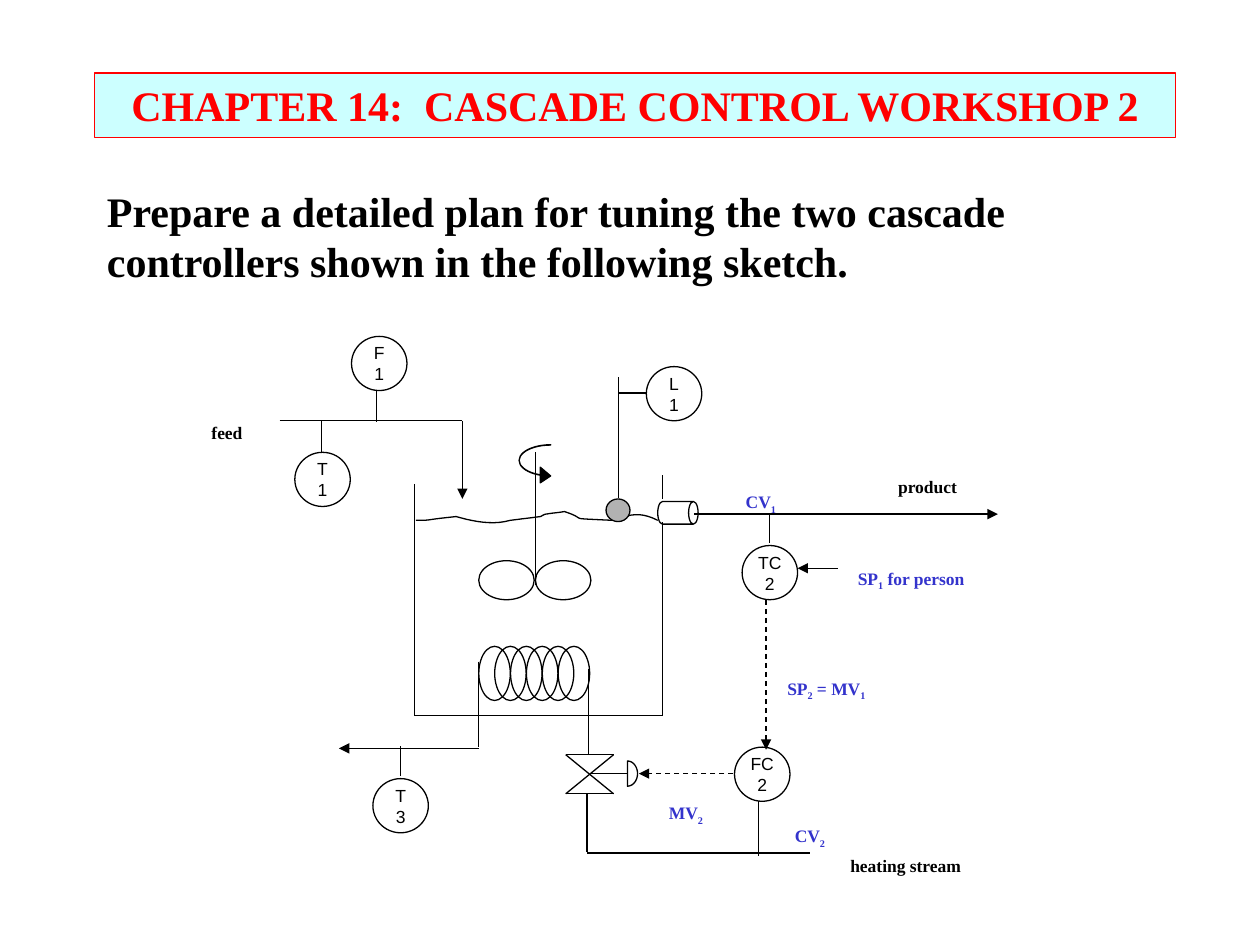
from lxml import etree
from math import cos, pi, sin
from pptx import Presentation
from pptx.dml.color import RGBColor
from pptx.enum.dml import MSO_LINE
from pptx.enum.shapes import MSO_CONNECTOR, MSO_SHAPE
from pptx.enum.text import MSO_ANCHOR, PP_ALIGN
from pptx.oxml.ns import qn
from pptx.util import Inches, Pt

STRAIGHT = MSO_CONNECTOR.STRAIGHT
OVAL = MSO_SHAPE.OVAL
DASH = MSO_LINE.DASH
TOP, MIDDLE = MSO_ANCHOR.TOP, MSO_ANCHOR.MIDDLE
LEFT, CENTER = PP_ALIGN.LEFT, PP_ALIGN.CENTER

THEME = {
    "black": RGBColor.from_string("000000"),
    "red": RGBColor.from_string("FF0000"),
    "banner": RGBColor.from_string("CCFFFF"),
    "float": RGBColor.from_string("B2B2B2"),
    "signal": RGBColor.from_string("3333CC"),
    "line": Pt(0.75),
    "heading": {"name": "Times New Roman", "size": Pt(24), "bold": True},
    "label": {"name": "Times New Roman", "size": Pt(10), "bold": True},
    "tag": {"name": "Arial", "size": Pt(10), "bold": False},
}


def write(shape, lines, style, color, align=LEFT, anchor=TOP, wrap=False):
    """Fill a shape with lines of text; parts between underscores are subscripts."""
    frame = shape.text_frame
    frame.word_wrap = wrap
    frame.vertical_anchor = anchor
    for index, line in enumerate(lines):
        paragraph = frame.add_paragraph() if index else frame.paragraphs[0]
        paragraph.alignment = align
        for part, text in enumerate(line.split("_")):
            if not text:
                continue
            run = paragraph.add_run()
            run.text = text
            for attribute, value in THEME[style].items():
                setattr(run.font, attribute, value)
            run.font.color.rgb = THEME[color]
            if part % 2:
                run.font._element.set("baseline", "-25000")


def connect(x1, y1, x2, y2, arrow=False, dash=None):
    """Draw a straight line, with an arrowhead at its end if asked for."""
    connector = shapes.add_connector(
        STRAIGHT, Inches(x1), Inches(y1), Inches(x2), Inches(y2))
    connector.line.width = THEME["line"]
    connector.line.color.rgb = THEME["black"]
    connector.line.dash_style = dash
    if arrow:
        etree.SubElement(connector.line._get_or_add_ln(), qn("a:tailEnd"), type="triangle")
    etree.SubElement(connector._element.spPr, qn("a:effectLst"))


presentation = Presentation()
presentation.slide_width, presentation.slide_height = Inches(10), Inches(7.5)
slide = presentation.slides.add_slide(presentation.slide_layouts[6])
shapes = slide.shapes

# Title banner
banner = shapes.add_shape(
    MSO_SHAPE.RECTANGLE, Inches(0.75), Inches(0.58), Inches(8.58), Inches(0.51))
banner.shadow.inherit = False
banner.fill.solid()
banner.fill.fore_color.rgb = THEME["banner"]
banner.line.color.rgb = THEME["red"]
banner.line.width = THEME["line"]
write(banner, ["CHAPTER 14:  CASCADE CONTROL WORKSHOP 2"], "heading", "red", CENTER, wrap=True)

# Task
task = shapes.add_textbox(Inches(0.75), Inches(1.42), Inches(8.58), Inches(0.9))
write(task, ["Prepare a detailed plan for tuning the two cascade controllers "
             "shown in the following sketch."], "heading", "black", wrap=True)

# Liquid surface, sampled along its Bezier curves
surface_start = (5.22, 4.13)
surface_curves = [
    ((5.08, 4.06), (5.01, 4.08), (4.86, 4.13)),
    ((4.46, 4.11), (4.69, 4.13), (4.48, 4.06)),
    ((4.43, 4.07), (4.39, 4.07), (4.34, 4.08)),
    ((4.32, 4.08), (4.31, 4.09), (4.29, 4.1)),
    ((4.21, 4.11), (4.05, 4.13), (4.05, 4.13)),
    ((3.91, 4.17), (3.76, 4.14), (3.62, 4.1)),
    ((3.33, 4.13), (3.44, 4.13), (3.3, 4.13)),
]
steps = 10
surface = [surface_start]
for control1, control2, end in surface_curves:
    start = surface[-1]
    for t in (step / steps for step in range(1, steps + 1)):
        surface.append(tuple(
            (1 - t) ** 3 * a + 3 * (1 - t) ** 2 * t * b + 3 * (1 - t) * t ** 2 * c + t ** 3 * d
            for a, b, c, d in zip(start, control1, control2, end)))

# Valve actuator, a half ellipse
angles = [pi * step / 20 - pi / 2 for step in range(21)]
actuator = [(4.98 + 0.08 * cos(angle), 6.14 + 0.1 * sin(angle)) for angle in angles]

outlined = []
for points, closed in ((surface, False), (actuator, True)):
    corners = [(Inches(x), Inches(y)) for x, y in points]
    builder = shapes.build_freeform(*corners[0])
    builder.add_line_segments(corners[1:], close=closed)
    outlined.append((builder.convert_to_shape(), None))

# Heating coil, stirrer blades, outlet, rotation arrow and level float
parts = [(OVAL, 3.8 + 0.126 * turn, 5.13, 0.25, 0.43, None) for turn in range(6)]
parts += [(OVAL, x, 4.45, 0.44, 0.31, None) for x in (3.8, 4.25)]
parts += [
    (MSO_SHAPE.CAN, 5.29, 3.91, 0.18, 0.32, None),
    (MSO_SHAPE.CURVED_RIGHT_ARROW, 4.12, 3.53, 0.25, 0.31, "black"),
    (OVAL, 4.81, 3.96, 0.19, 0.18, "float"),
]
for kind, x, y, width, height, fill in parts:
    shape = shapes.add_shape(kind, Inches(x), Inches(y), Inches(width), Inches(height))
    if kind == MSO_SHAPE.CAN:
        shape.rotation = 90
        shape.adjustments[0] = 0.42
    elif kind == MSO_SHAPE.CURVED_RIGHT_ARROW:
        for index, value in enumerate((0.01, 0.5, 0.33)):
            shape.adjustments[index] = value
    outlined.append((shape, fill))

# Instrument bubbles
for letters, number, x, y in (
    ("F", "1", 2.79, 2.67), ("T", "1", 2.34, 3.59), ("L", "1", 5.13, 2.91),
    ("TC", "2", 5.89, 4.33), ("FC", "2", 5.83, 5.93), ("T", "3", 2.96, 6.18),
):
    bubble = shapes.add_shape(OVAL, Inches(x), Inches(y), Inches(0.44), Inches(0.43))
    write(bubble, [letters, number], "tag", "black", CENTER, MIDDLE)
    outlined.append((bubble, None))

# Shared outline
for shape, fill in outlined:
    shape.shadow.inherit = False
    shape.line.color.rgb = THEME["black"]
    shape.line.width = THEME["line"]
    if fill:
        shape.fill.solid()
        shape.fill.fore_color.rgb = THEME[fill]
    else:
        shape.fill.background()

# Tank walls, pipes, valve and instrument taps
for ends in (
    (3.29, 3.84, 3.29, 5.68), (3.29, 5.68, 5.26, 5.68),
    (5.26, 5.68, 5.26, 4.14), (5.26, 3.96, 5.26, 3.77),
    (4.25, 3.59, 4.25, 4.64), (2.22, 3.34, 3.67, 3.34),
    (4.67, 5.31, 4.67, 5.99), (3.8, 5.25, 3.8, 5.93),
    (4.49, 5.99, 4.87, 5.99), (4.49, 6.3, 4.87, 6.3),
    (4.49, 5.99, 4.87, 6.3), (4.49, 6.3, 4.87, 5.99),
    (4.68, 6.14, 4.98, 6.14),
    (4.66, 6.3, 4.66, 6.76), (4.66, 6.77, 6.43, 6.77),
    (6.11, 4.31, 6.11, 4.07), (6.02, 6.36, 6.02, 6.79),
    (2.55, 3.59, 2.55, 3.33), (2.99, 3.1, 2.99, 3.35),
    (3.18, 6.16, 3.18, 5.92), (4.91, 3.95, 4.91, 2.99),
    (5.13, 3.12, 4.91, 3.12),
):
    connect(*ends)

# Flows, set point and control signals
for ends, dash in (
    ((3.67, 3.34, 3.67, 3.96), None), ((5.51, 4.08, 7.92, 4.08), None),
    ((3.8, 5.94, 2.69, 5.94), None), ((6.65, 4.51, 6.33, 4.51), None),
    ((6.08, 4.76, 6.08, 5.95), DASH), ((5.82, 6.14, 5.07, 6.14), DASH),
):
    connect(*ends, arrow=True, dash=dash)

# Labels
for text, x, y, width, color in (
    ("feed", 1.58, 3.3, 0.45, "black"),
    ("product", 7.03, 3.73, 0.67, "black"),
    ("heating stream", 6.65, 6.74, 1.09, "black"),
    ("SP_1_ for person", 6.71, 4.46, 1.06, "signal"),
    ("SP_2_ = MV_1_", 6.15, 5.33, 0.84, "signal"),
    ("CV_2_", 6.21, 6.5, 0.49, "signal"),
    ("MV_2_", 5.21, 6.32, 0.48, "signal"),
    ("CV_1_", 5.82, 3.85, 0.49, "signal"),
):
    label = shapes.add_textbox(Inches(x), Inches(y), Inches(width), Inches(0.27))
    write(label, [text], "label", color)

presentation.save("out.pptx")
